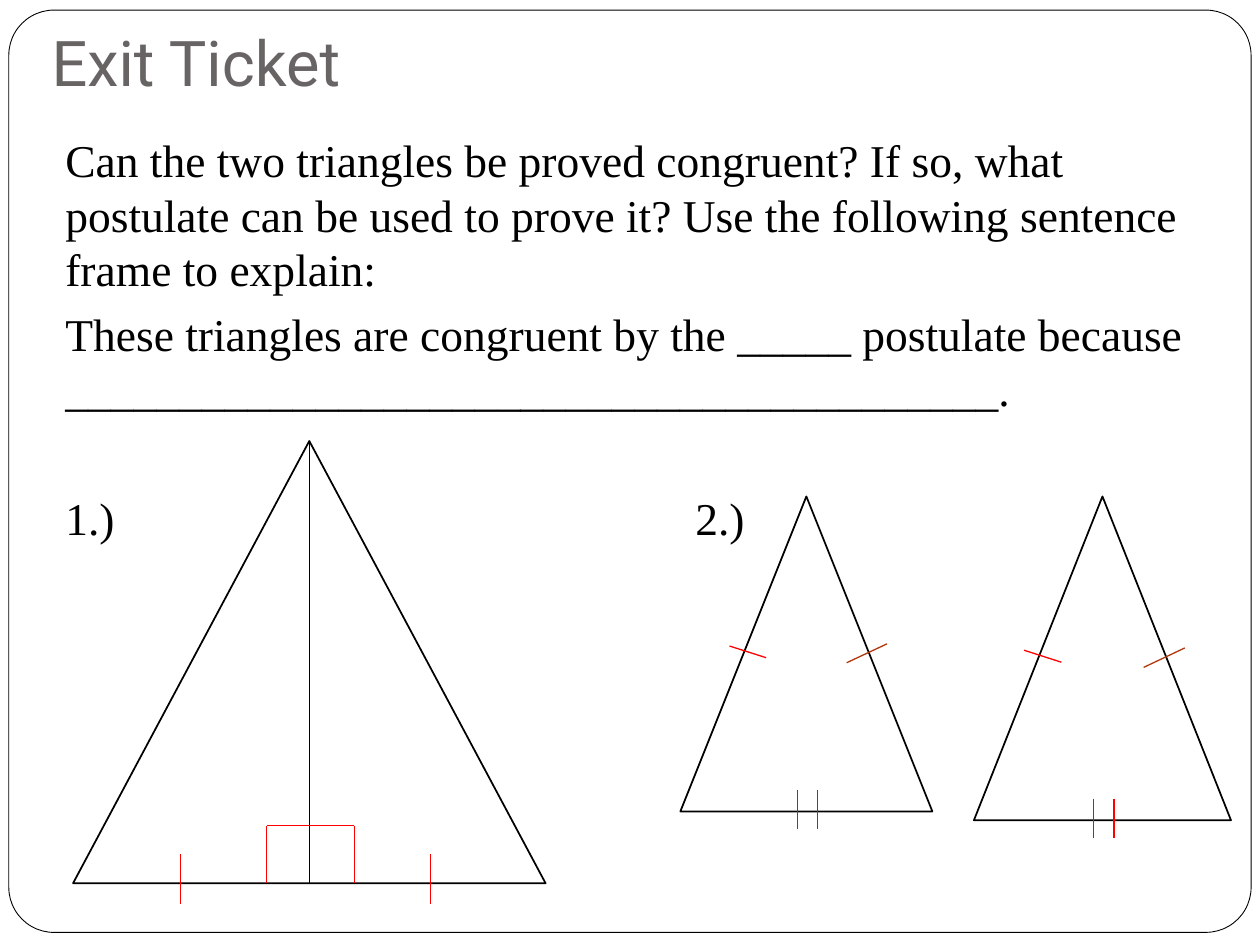
from dataclasses import dataclass

from lxml.etree import SubElement
from pptx import Presentation
from pptx.dml.color import RGBColor
from pptx.enum.shapes import MSO_CONNECTOR, MSO_SHAPE
from pptx.enum.text import MSO_ANCHOR, PP_ALIGN
from pptx.oxml.ns import qn
from pptx.util import Inches, Pt

SLIDE_W, SLIDE_H = 10, 7.5


@dataclass(frozen=True)
class Theme:
    ink: RGBColor = RGBColor(0, 0, 0)
    paper: RGBColor = RGBColor(255, 255, 255)
    title: RGBColor = RGBColor(0x69, 0x64, 0x64)
    mark: RGBColor = RGBColor(255, 0, 0)
    rust: RGBColor = RGBColor(0xB1, 0x36, 0x0B)
    title_font: str = "Roboto"
    body_font: str = "Times New Roman"
    title_size: int = 36
    body_size: int = 26
    body_gap: float = 5.8
    frame_line: float = 0.5
    outline: float = 1
    mark_line: float = 0.75


THEME = Theme()

# Marks as (x1, y1, x2, y2, colour), in shares of the triangle's box
SPLIT_MARKS = [
    (0.5, 0, 0.5, 1, THEME.ink),                # altitude
    (0.41, 0.87, 0.595, 0.87, THEME.mark),      # right angles
    *[(x, 0.87, x, 1, THEME.mark) for x in (0.41, 0.595)],
    *[(x, 0.934, x, 1.046, THEME.mark) for x in (0.227, 0.757)],
]
SIDE_MARKS = [
    (0.195, 0.475, 0.34, 0.512, THEME.mark),    # left side
    (0.82, 0.468, 0.66, 0.528, THEME.rust),     # right side
    *[(x, 0.933, x, 1.056, THEME.mark) for x in (0.465, 0.545)],
]


def inches(box):
    return [Inches(length) for length in box]


def style_runs(paragraph, font, size, colour):
    for run in paragraph.runs:
        run.font.name = font
        run.font.size = Pt(size)
        run.font.color.rgb = colour


def set_tab_stops(paragraph, positions):
    stops = SubElement(paragraph._p.get_or_add_pPr(), qn("a:tabLst"))
    for position in positions:
        SubElement(stops, qn("a:tab"), pos=str(Inches(position)), algn="l")


def add_frame(slide, box):
    frame = slide.shapes.add_shape(MSO_SHAPE.ROUNDED_RECTANGLE, *inches(box))
    frame.adjustments[0] = 0.049
    frame.shadow.inherit = False
    frame.fill.background()
    frame.line.color.rgb = THEME.ink
    frame.line.width = Pt(THEME.frame_line)


def add_title(slide, box, wording):
    title = slide.shapes.title
    title.left, title.top, title.width, title.height = inches(box)
    text = title.text_frame
    text.text = wording
    text.vertical_anchor = MSO_ANCHOR.BOTTOM
    text.margin_bottom = Inches(0.1)
    text.paragraphs[0].alignment = PP_ALIGN.LEFT
    style_runs(text.paragraphs[0], THEME.title_font, THEME.title_size, THEME.title)


def add_question(slide, box, paragraphs):
    """Place paragraphs given as (wording, space before in points)."""
    text = slide.shapes.add_textbox(*inches(box)).text_frame
    text.word_wrap = True
    text.text = "\n".join(wording for wording, _ in paragraphs)
    for paragraph, (wording, gap) in zip(text.paragraphs, paragraphs):
        paragraph.space_before = Pt(gap)
        style_runs(paragraph, THEME.body_font, THEME.body_size, THEME.ink)
        if "\t" in wording:
            set_tab_stops(paragraph, range(1, wording.count("\t") + 1))


def add_triangle(slide, box, marks):
    left, top, width, height = box
    triangle = slide.shapes.add_shape(MSO_SHAPE.ISOSCELES_TRIANGLE, *inches(box))
    triangle.shadow.inherit = False
    triangle.fill.solid()
    triangle.fill.fore_color.rgb = THEME.paper
    triangle.line.color.rgb = THEME.ink
    triangle.line.width = Pt(THEME.outline)

    for x1, y1, x2, y2, colour in marks:
        ends = (left + x1 * width, top + y1 * height,
                left + x2 * width, top + y2 * height)
        mark = slide.shapes.add_connector(MSO_CONNECTOR.STRAIGHT, *inches(ends))
        mark.line.color.rgb = colour
        mark.line.width = Pt(THEME.mark_line)
        SubElement(mark._element.spPr, qn("a:effectLst"))


def main():
    deck = Presentation()
    deck.slide_width, deck.slide_height = inches((SLIDE_W, SLIDE_H))
    slide = deck.slides.add_slide(deck.slide_layouts[5])

    add_frame(slide, (0.07, 0.08, SLIDE_W - 0.14, SLIDE_H - 0.18))
    add_title(slide, (0.31, 0.17, 9.17, 0.72), "Exit Ticket")

    # Question, sentence frame and, one open line below, the item numbers
    gap = THEME.body_gap
    open_line = 1.2 * THEME.body_size
    add_question(slide, (0.42, 1, 9.08, 6.17), [
        ("Can the two triangles be proved congruent? If so, what postulate "
         "can be used to prove it? Use the following sentence frame to "
         "explain:", gap),
        ("These triangles are congruent by the _____ postulate because "
         + "_" * 41 + ".", gap),
        ("1.)\t\t\t\t\t2.)", 2 * gap + open_line),
    ])

    # Item 1: one split triangle; item 2: a pair of triangles
    add_triangle(slide, (0.58, 3.5, 3.75, 3.51), SPLIT_MARKS)
    add_triangle(slide, (5.4, 3.94, 2, 2.5), SIDE_MARKS)
    add_triangle(slide, (7.73, 3.94, 2.04, 2.57), SIDE_MARKS)

    deck.save("out.pptx")


if __name__ == "__main__":
    main()
